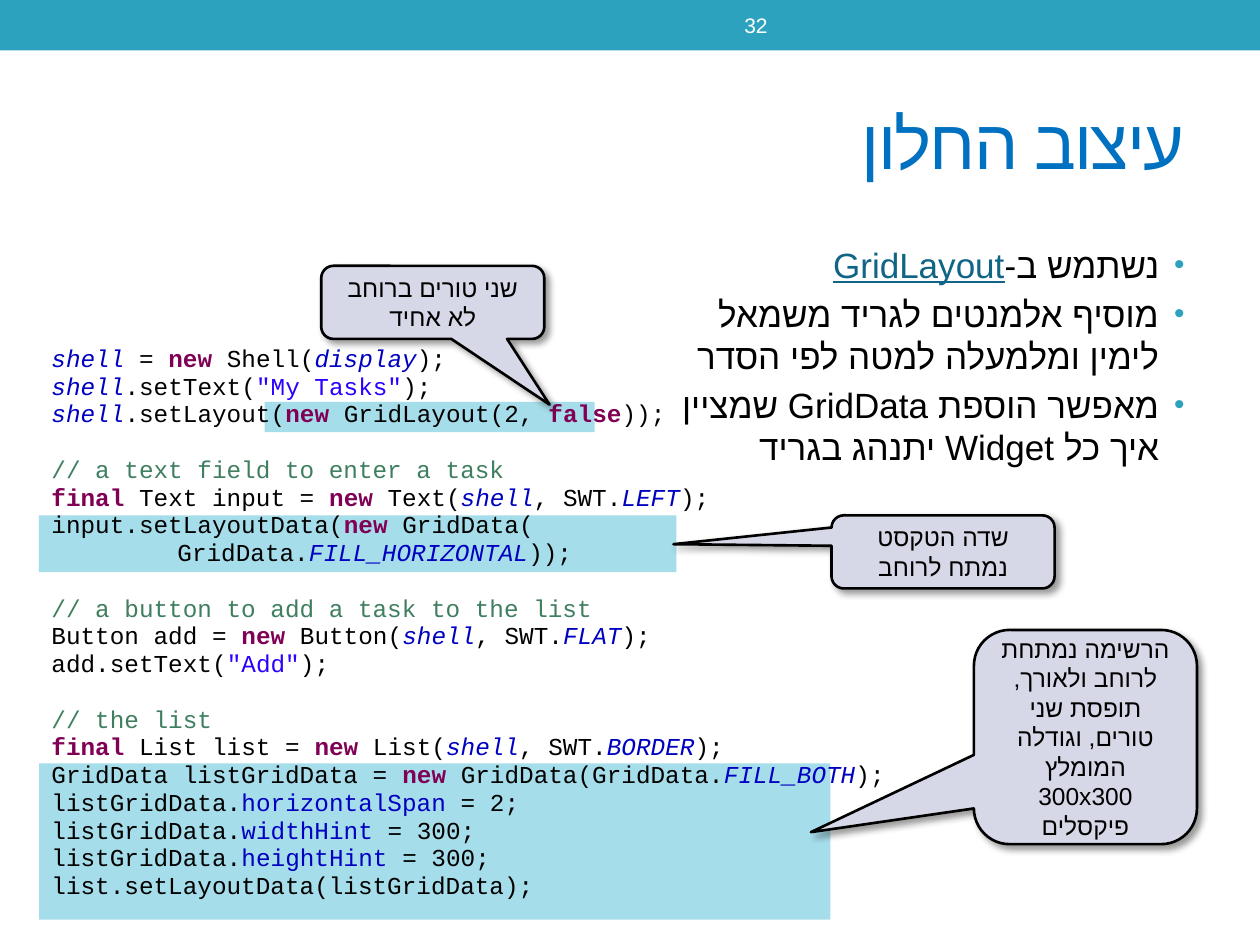
from lxml.etree import SubElement
from pptx import Presentation
from pptx.dml.color import RGBColor
from pptx.enum.shapes import MSO_SHAPE as Shape
from pptx.enum.text import MSO_ANCHOR as Anchor, MSO_AUTO_SIZE as AutoSize, PP_ALIGN as Align
from pptx.oxml import parse_xml
from pptx.oxml.ns import nsdecls, qn
from pptx.util import Inches, Pt

BLACK = RGBColor(0x00, 0x00, 0x00)
WHITE = RGBColor(0xFF, 0xFF, 0xFF)
TEAL = RGBColor(0x2D, 0xA2, 0xBF)
HIGHLIGHT = RGBColor(0xA6, 0xDD, 0xEA)
TITLE_BLUE = RGBColor(0x00, 0x70, 0xC0)
LINK = RGBColor(0x10, 0x64, 0x85)
CALLOUT_FILL = RGBColor(0xD7, 0xD8, 0xE7)
FIELD = RGBColor(0x00, 0x00, 0xC0)
KEYWORD = RGBColor(0x7F, 0x00, 0x55)
STRING = RGBColor(0x2A, 0x00, 0xFF)
COMMENT = RGBColor(0x3F, 0x7F, 0x5F)

CODE_STYLES = {
    "*": (FIELD, False, True),
    "$": (FIELD, False, False),
    "@": (KEYWORD, True, False),
    "^": (STRING, False, False),
    "#": (COMMENT, False, False),
}
CODE_BLOCKS = [
    [
        "|*shell| = |@new| Shell(|*display|);",
        '|*shell|.setText(|^"My Tasks"|);',
        "|*shell|.setLayout(|@new |GridLayout(2, |@false|));",
    ],
    [
        "|#// a text field to enter a task|",
        "|@final| Text input = |@new| Text(|*shell|, SWT.|*LEFT|);",
        "input.setLayoutData(|@new |GridData(",
        "\t\tGridData.|*FILL_HORIZONTAL|));",
    ],
    [
        "|#// a button to add a task to the list|",
        "Button add = |@new| Button(|*shell|, SWT.|*FLAT|);",
        'add.setText(|^"Add"|);',
    ],
    [
        "|#// the list|",
        "|@final| List list = |@new| List(|*shell|, SWT.|*BORDER|);",
        "GridData listGridData = |@new |GridData(GridData.|*FILL_BOTH|);",
        "listGridData.|$horizontalSpan| = 2;",
        "listGridData.|$widthHint| = 300;",
        "listGridData.|$heightHint| = 300;",
        "list.setLayoutData(listGridData);",
    ],
]
BULLETS = [
    [("נשתמש ב-", False), ("GridLayout", True)],
    [("מוסיף אלמנטים לגריד משמאל לימין ומלמעלה למטה לפי הסדר", False)],
    [("מאפשר הוספת GridData שמציין איך כל Widget יתנהג בגריד", False)],
]
HIGHLIGHTS = [(0.31, 6.06, 6.28, 1.24), (0.31, 4.09, 5.06, 0.45), (2.1, 3.19, 2.62, 0.24)]
CALLOUTS = [
    ((2.55, 2.11, 1.77, 0.58), (0.524, 1.4), "שני טורים ברוחב לא אחיד"),
    ((6.6, 4.09, 1.77, 0.58), (-1.209, -0.105), "שדה הטקסט נמתח לרוחב"),
    ((7.73, 5, 1.77, 1.7), (-1.231, 0.444),
     "הרשימה נמתחת לרוחב ולאורך, תופסת שני טורים, וגודלה המומלץ 300x300 פיקסלים"),
]


def place(shape, left, top, width, height):
    """Move and size a shape, in inches."""
    shape.left, shape.top = Inches(left), Inches(top)
    shape.width, shape.height = Inches(width), Inches(height)


def format_hebrew(paragraph, size, color, alignment):
    """Make a paragraph right-to-left Arial."""
    paragraph.alignment = alignment
    font = paragraph.font
    font.name, font.size = "Arial", Pt(size)
    font.color.rgb = color
    properties = paragraph._p.get_or_add_pPr()
    properties.set("rtl", "1")
    SubElement(properties.find(qn("a:defRPr")), qn("a:cs"), typeface="Arial")


def add_box(slide, kind, bounds, fill):
    """Add a flat filled shape without an outline."""
    shape = slide.shapes.add_shape(kind, *map(Inches, bounds))
    shape.shadow.inherit = False
    shape.fill.solid()
    shape.fill.fore_color.rgb = fill
    shape.line.fill.background()
    return shape


def add_title(slide, text):
    """Fill the title placeholder."""
    title = slide.shapes.title
    place(title, 0.5, 0.58, 9, 1.08)
    title.text_frame.text = text
    title.text_frame.vertical_anchor = Anchor.MIDDLE
    paragraph = title.text_frame.paragraphs[0]
    format_hebrew(paragraph, 40, TITLE_BLUE, Align.RIGHT)
    paragraph._p.pPr.find(qn("a:defRPr")).set("spc", "-100")


def add_number(slide, text):
    """Add the slide number on the banner."""
    box = slide.shapes.add_textbox(*map(Inches, (3.75, 0.02, 4.5, 0.36)))
    box.text_frame.word_wrap = True
    box.text_frame.vertical_anchor = Anchor.MIDDLE
    box.text_frame.text = text
    format_hebrew(box.text_frame.paragraphs[0], 12, WHITE, Align.CENTER)


def add_bullets(slide):
    """Fill the body placeholder with the bulleted list."""
    body = slide.placeholders[1]
    place(body, 5.26, 1.88, 4.24, 4.82)
    frame = body.text_frame
    frame.auto_size = AutoSize.NONE
    for index, parts in enumerate(BULLETS):
        paragraph = frame.add_paragraph() if index else frame.paragraphs[0]
        paragraph.space_before = Pt(4)
        properties = paragraph._p.get_or_add_pPr()
        properties.set("marL", str(Inches(0.2)))
        properties.set("indent", str(Inches(-0.2)))
        bullet_color = SubElement(properties, qn("a:buClr"))
        SubElement(bullet_color, qn("a:srgbClr"), val=str(TEAL))
        SubElement(properties, qn("a:buSzPct"), val="85000")
        SubElement(properties, qn("a:buFont"), typeface="Arial")
        SubElement(properties, qn("a:buChar"), char="•")
        format_hebrew(paragraph, 20, BLACK, Align.RIGHT)
        for text, linked in parts:
            run = paragraph.add_run()
            run.text = text
            if linked:
                run.font.underline = True
                run.font.color.rgb = LINK


def add_code_line(paragraph, line):
    """Write one line of code, with a style mark leading every second part."""
    paragraph.line_spacing = 0.95
    paragraph.font.name, paragraph.font.size = "Courier New", Pt(13.9)
    paragraph.font.color.rgb = BLACK
    for index, part in enumerate(line.split("|")):
        if not part:
            continue
        run = paragraph.add_run()
        run.text = part
        if index % 2:
            run.text = part[1:]
            run.font.color.rgb, run.font.bold, run.font.italic = CODE_STYLES[part[0]]


def add_code(slide):
    """Add the code listing, with a line's gap between blocks."""
    box = slide.shapes.add_textbox(*map(Inches, (0.31, 2.69, 8.78, 4.61)))
    frame = box.text_frame
    frame.word_wrap = True
    for block_index, block in enumerate(CODE_BLOCKS):
        for line_index, line in enumerate(block):
            first = block_index == line_index == 0
            paragraph = frame.paragraphs[0] if first else frame.add_paragraph()
            if line_index == 0 and not first:
                paragraph.space_before = Pt(15.9)
            add_code_line(paragraph, line)


def add_callout(slide, bounds, tip, text):
    """Add an outlined speech callout with a soft shadow."""
    callout = add_box(slide, Shape.ROUNDED_RECTANGULAR_CALLOUT, bounds, CALLOUT_FILL)
    callout.adjustments[0], callout.adjustments[1] = tip
    callout.line.color.rgb = BLACK
    callout.line.width = Pt(1.5)
    callout._element.spPr.find(qn("a:effectLst")).append(parse_xml(
        f'<a:outerShdw {nsdecls("a")} blurRad="{Pt(4)}" dist="{Pt(3)}" dir="2700000">'
        '<a:srgbClr val="000000"><a:alpha val="40000"/></a:srgbClr></a:outerShdw>'))
    callout.text_frame.text = text
    callout.text_frame.vertical_anchor = Anchor.MIDDLE
    format_hebrew(callout.text_frame.paragraphs[0], 14, BLACK, Align.CENTER)


def main():
    """Build and save the slide."""
    presentation = Presentation()
    presentation.slide_width, presentation.slide_height = Inches(10), Inches(7.5)
    slide = presentation.slides.add_slide(presentation.slide_layouts[1])
    add_box(slide, Shape.RECTANGLE, (0, 0, 10, 0.4), TEAL)
    for bounds in HIGHLIGHTS:
        add_box(slide, Shape.RECTANGLE, bounds, HIGHLIGHT)
    add_title(slide, "עיצוב החלון")
    add_number(slide, "32")
    add_code(slide)
    add_bullets(slide)
    for bounds, tip, text in CALLOUTS:
        add_callout(slide, bounds, tip, text)
    presentation.save("out.pptx")


if __name__ == "__main__":
    main()
